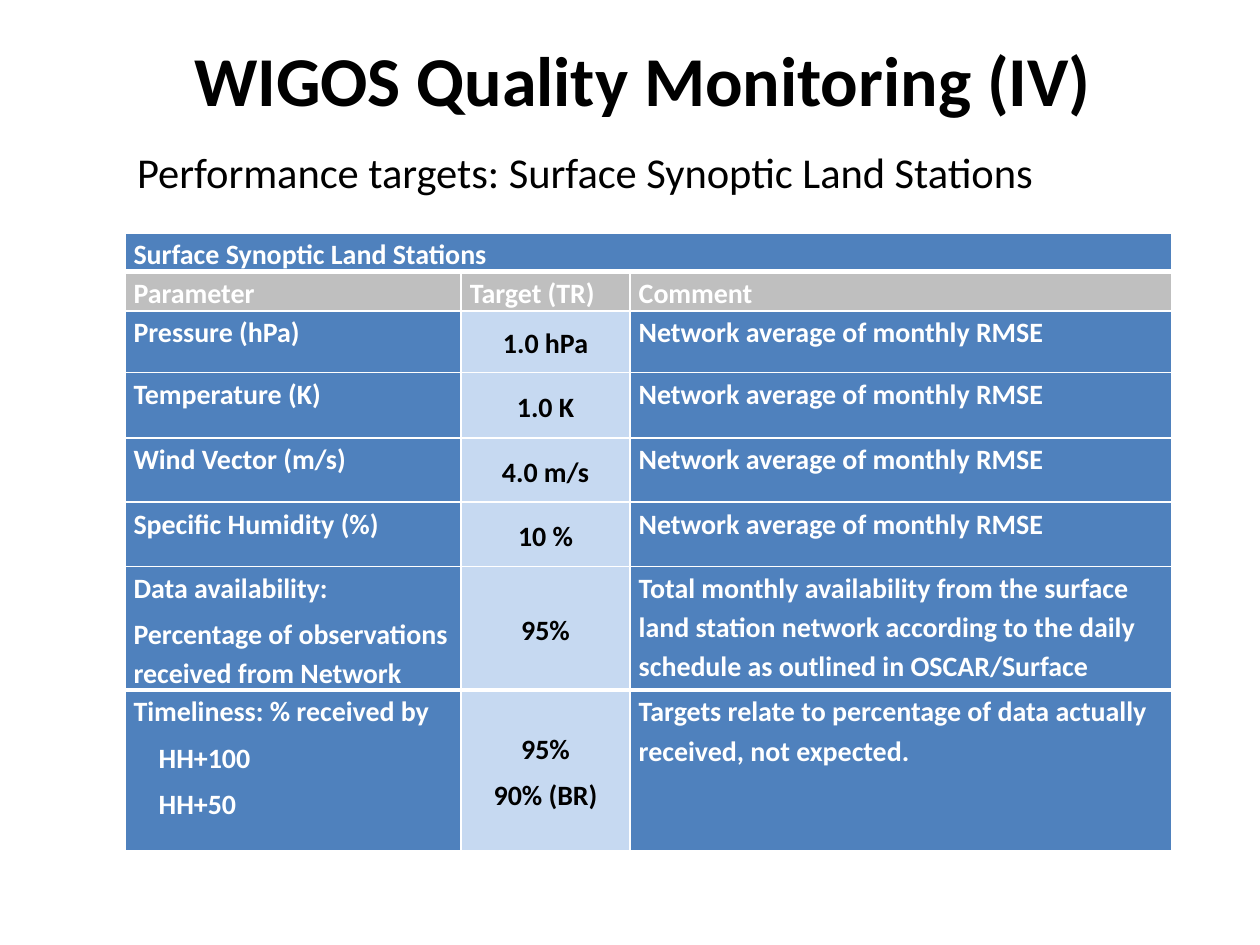
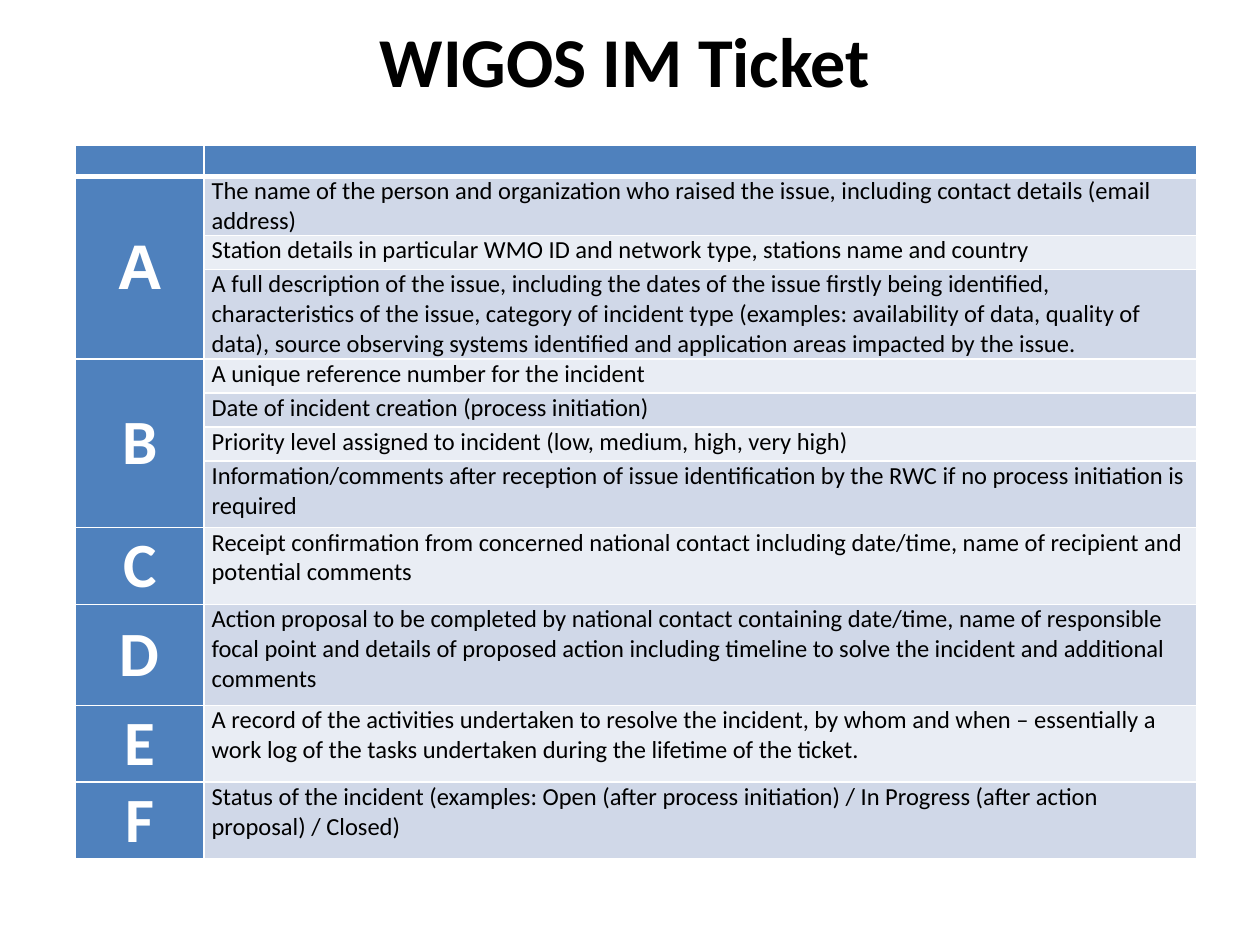
from dataclasses import dataclass

from lxml import etree
from pptx import Presentation
from pptx.dml.color import RGBColor
from pptx.enum.text import MSO_ANCHOR, PP_ALIGN
from pptx.oxml.ns import qn
from pptx.slide import Slide
from pptx.table import Table, _Cell
from pptx.util import Inches, Pt

TOP, MIDDLE = MSO_ANCHOR.TOP, MSO_ANCHOR.MIDDLE
LEFT, CENTER = PP_ALIGN.LEFT, PP_ALIGN.CENTER


@dataclass(frozen=True)
class Theme:
    font: str = "Calibri"
    letter_font: str = "Arial"
    black: str = "000000"
    white: str = "FFFFFF"
    blue: str = "4F81BD"
    grey: str = "BFBFBF"
    pale_blue: str = "C6D9F1"
    band_dark: str = "D0D8E8"
    band_light: str = "E9EDF4"
    title_size: float = 40
    subtitle_size: float = 24.3
    target_size: float = 16
    ticket_size: float = 14
    letter_size: float = 36
    thin_line: float = 1
    thick_line: float = 3


THEME = Theme()


@dataclass(frozen=True)
class Area:
    left: float
    top: float
    width: float
    height: float


@dataclass(frozen=True)
class TextStyle:
    size: float
    color: str = THEME.black
    bold: bool = False
    align: PP_ALIGN = LEFT
    anchor: MSO_ANCHOR = TOP
    font: str = THEME.font


@dataclass(frozen=True)
class CellStyle:
    text: TextStyle
    fill: str
    margin: float
    line_spacing: float = 1.0
    paragraph_gap: float = 0
    later_indent: float = 0


TITLE = TextStyle(THEME.title_size, bold=True, align=CENTER, anchor=MIDDLE)
SUBTITLE = TextStyle(THEME.subtitle_size, anchor=MIDDLE)


# Shared drawing functions
def style_runs(paragraph, style: TextStyle) -> None:
    paragraph.alignment = style.align
    for run in paragraph.runs:
        run.font.name = style.font
        run.font.size = Pt(style.size)
        run.font.bold = style.bold
        run.font.color.rgb = RGBColor.from_string(style.color)


def add_text(page: Slide, text: str, area: Area, style: TextStyle) -> None:
    box = page.shapes.add_textbox(Inches(area.left), Inches(area.top),
                                  Inches(area.width), Inches(area.height))
    frame = box.text_frame
    frame.word_wrap = True
    frame.vertical_anchor = style.anchor
    frame.text = text
    style_runs(frame.paragraphs[0], style)


def add_grid(page: Slide, left: float, top: float, columns: list[float],
             rows: list[float], thick_below: set[int]) -> Table:
    frame = page.shapes.add_table(len(rows), len(columns), Inches(left), Inches(top),
                                  Inches(sum(columns)), Inches(sum(rows)))
    table = frame.table
    table.first_row = table.horz_banding = False
    for column, width in zip(table.columns, columns):
        column.width = Inches(width)
    for index, (row, height) in enumerate(zip(table.rows, rows)):
        row.height = Inches(height)
        for cell in row.cells:
            add_borders(cell, index - 1 in thick_below, index in thick_below)
    return table


def add_borders(cell: _Cell, thick_top: bool, thick_bottom: bool) -> None:
    properties = cell._tc.get_or_add_tcPr()
    edges = {"L": False, "R": False, "T": thick_top, "B": thick_bottom}
    for edge, thick in edges.items():
        width = THEME.thick_line if thick else THEME.thin_line
        line = etree.SubElement(properties, qn(f"a:ln{edge}"), w=str(Pt(width)))
        fill = etree.SubElement(line, qn("a:solidFill"))
        etree.SubElement(fill, qn("a:srgbClr"), val=THEME.white)


def fill_cell(cell: _Cell, text: str, style: CellStyle) -> None:
    cell.fill.solid()
    cell.fill.fore_color.rgb = RGBColor.from_string(style.fill)
    cell.margin_left = cell.margin_right = Inches(style.margin)
    cell.margin_top = cell.margin_bottom = 0
    cell.vertical_anchor = style.text.anchor
    cell.text_frame.text = text
    for index, paragraph in enumerate(cell.text_frame.paragraphs):
        paragraph.line_spacing = style.line_spacing
        paragraph.space_after = Pt(style.paragraph_gap)
        if index:
            paragraph.space_before = Pt(style.paragraph_gap)
            if style.later_indent:
                properties = paragraph._p.get_or_add_pPr()
                properties.set("marL", str(Inches(style.later_indent)))
                properties.set("indent", "0")
        style_runs(paragraph, style.text)
        if not paragraph.runs:
            etree.SubElement(paragraph._p, qn("a:endParaRPr"),
                             sz=str(Pt(style.text.size).centipoints))


# Slide 1: performance targets
AVERAGE = "Network average of monthly RMSE"
TARGETS = [
    ("Pressure (hPa)", "1.0 hPa", AVERAGE),
    ("Temperature (K)", "1.0 K", AVERAGE),
    ("Wind Vector (m/s)", "4.0 m/s", AVERAGE),
    ("Specific Humidity (%)", "10 %", AVERAGE),
    ("Data availability:\nPercentage of observations received from Network", "95%",
     "Total monthly availability from the surface land station network according to "
     "the daily schedule as outlined in OSCAR/Surface"),
    ("Timeliness: % received by\nHH+100\nHH+50", "95%\n90% (BR)",
     "Targets relate to percentage of data actually received, not expected."),
]


def target_style(fill: str, indent: float = 0) -> CellStyle:
    is_target = fill == THEME.pale_blue
    text = TextStyle(THEME.target_size, THEME.black if is_target else THEME.white, True,
                     CENTER if is_target else LEFT, MIDDLE if is_target else TOP)
    return CellStyle(text, fill, 0.07, 1.15, 2, indent)


def build_targets(page: Slide) -> None:
    add_text(page, "Performance targets: Surface Synoptic Land Stations",
             Area(0.99, 0.89, 8.71, 0.94), SUBTITLE)
    heights = [0.3, 0.31, 0.49, 0.52, 0.51, 0.51, 0.98, 1.28]
    last = len(heights) - 1
    table = add_grid(page, 0.99, 1.85, [2.67, 1.34, 4.3], heights, {0, last - 1})

    table.cell(0, 0).merge(table.cell(0, 2))
    fill_cell(table.cell(0, 0), "Surface Synoptic Land Stations", target_style(THEME.blue))
    for column, heading in enumerate(("Parameter", "Target (TR)", "Comment")):
        fill_cell(table.cell(1, column), heading, target_style(THEME.grey))
    fills = (THEME.blue, THEME.pale_blue, THEME.blue)
    for row, texts in enumerate(TARGETS, start=2):
        for column, (text, fill) in enumerate(zip(texts, fills)):
            indent = 0.2 if row == last and column == 0 else 0
            fill_cell(table.cell(row, column), text, target_style(fill, indent))
    add_text(page, "WIGOS Quality Monitoring (IV)", Area(0.6, 0, 9, 1.25), TITLE)


# Slide 2: incident ticket
TICKET = {
    "A": ["The name of the person and organization who raised the issue, including "
          "contact details (email address)",
          "Station details in particular WMO ID and network type, stations name and country",
          "A full description of the issue, including the dates of the issue firstly being "
          "identified, characteristics of the issue, category of incident type (examples: "
          "availability of data, quality of data), source observing systems identified and "
          "application areas impacted by the issue."],
    "B": ["A unique reference number for the incident",
          "Date of incident creation (process initiation)",
          "Priority level assigned to incident (low, medium, high, very high)",
          "Information/comments after reception of issue identification by the RWC if no "
          "process initiation is required"],
    "C": ["Receipt confirmation from concerned national contact including date/time, name "
          "of recipient and potential comments"],
    "D": ["Action proposal to be completed by national contact containing date/time, name "
          "of responsible focal point and details of proposed action including timeline to "
          "solve the incident and additional comments"],
    "E": ["A record of the activities undertaken to resolve the incident, by whom and when "
          "– essentially a work log of the tasks undertaken during the lifetime of the "
          "ticket."],
    "F": ["Status of the incident (examples: Open (after process initiation) / In Progress "
          "(after action proposal) / Closed)"],
}


def build_ticket(page: Slide) -> None:
    add_text(page, "WIGOS IM Ticket", Area(0.2, 0, 9.52, 0.94), TITLE)
    heights = [0.25, 0.47, 0.27, 0.71, 0.27, 0.27, 0.27, 0.53, 0.61, 0.8, 0.61, 0.61]
    table = add_grid(page, 0.6, 1.15, [1.02, 7.88], heights, {0})
    body = TextStyle(THEME.ticket_size)

    for cell in table.rows[0].cells:
        fill_cell(cell, "", CellStyle(body, THEME.blue, 0.06))
    row = 1
    for letter, details in TICKET.items():
        font = THEME.letter_font if letter == "A" else THEME.font
        letter_text = TextStyle(THEME.letter_size, THEME.white, True, CENTER, MIDDLE, font)
        if len(details) > 1:
            table.cell(row, 0).merge(table.cell(row + len(details) - 1, 0))
        fill_cell(table.cell(row, 0), letter, CellStyle(letter_text, THEME.blue, 0.06))
        for detail in details:
            band = THEME.band_dark if row % 2 else THEME.band_light
            fill_cell(table.cell(row, 1), detail, CellStyle(body, band, 0.06))
            row += 1


def main() -> None:
    deck = Presentation()
    deck.slide_width, deck.slide_height = Inches(10), Inches(7.5)
    blank = deck.slide_layouts[6]
    for build in (build_targets, build_ticket):
        build(deck.slides.add_slide(blank))
    deck.save("out.pptx")


if __name__ == "__main__":
    main()
